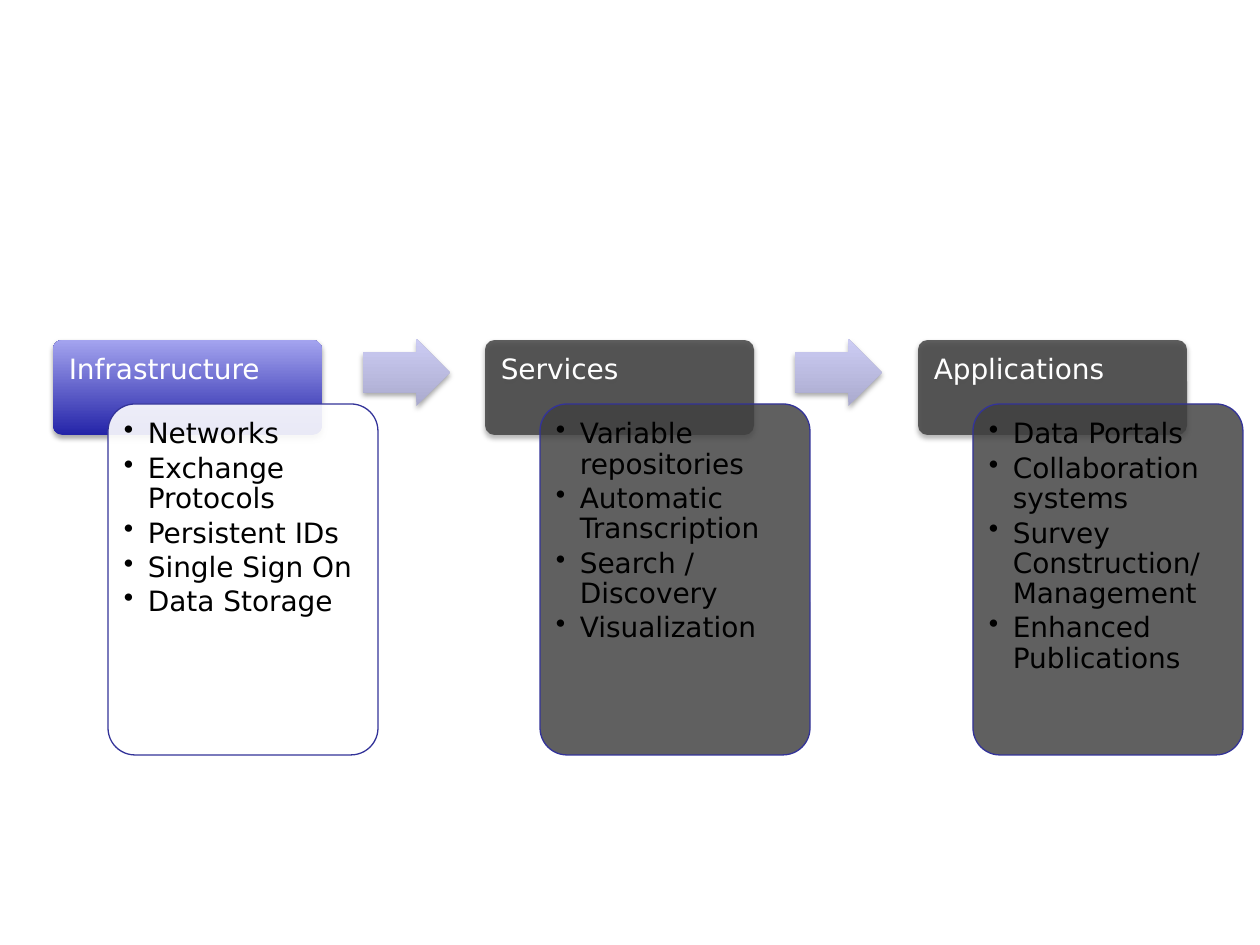
from lxml import etree
from pptx import Presentation
from pptx.dml.color import RGBColor
from pptx.enum.shapes import MSO_SHAPE
from pptx.enum.text import MSO_ANCHOR, PP_ALIGN
from pptx.oxml.ns import qn
from pptx.util import Pt

ROUND = MSO_SHAPE.ROUNDED_RECTANGLE
ARROW = MSO_SHAPE.RIGHT_ARROW
TOP = MSO_ANCHOR.TOP
LEFT = PP_ALIGN.LEFT
PX = 914400 / 126
FONT = "DejaVu Sans"
INK = {
    "head": ("2424A8", "A4A4EF"),
    "arrow": ("AAAACE", "CDCDF4"),
    "white": "FFFFFF",
    "black": "000000",
    "gray": "404040",
    "edge": "333399",
}
STAGES = [
    ("Infrastructure",
     ["Networks", "Exchange Protocols", "Persistent IDs", "Single Sign On",
      "Data Storage"]),
    ("Services",
     ["Variable repositories", "Automatic Transcription",
      "Search / Discovery", "Visualization"]),
    ("Applications",
     ["Data Portals", "Collaboration systems",
      "Survey Construction/ Management", "Enhanced Publications"]),
]


def add_box(kind, box, adjust, color, alpha=100, shadow=False):
    """Add a shape; a pair of colours makes a gradient from bottom to top."""
    shape = slide.shapes.add_shape(kind, *[round(n * PX) for n in box])
    for i, value in enumerate(adjust):
        shape.adjustments[i] = value
    shape.line.fill.background()
    shape.shadow.inherit = False
    if isinstance(color, tuple):
        shape.fill.gradient()
        shape.fill.gradient_angle = 90
        for stop, tone in zip(shape.fill.gradient_stops, color):
            stop.color.rgb = RGBColor.from_string(tone)
    else:
        shape.fill.solid()
        shape.fill.fore_color.rgb = RGBColor.from_string(color)
        tone = shape._element.spPr.find(qn("a:solidFill"))[0]
        etree.SubElement(tone, qn("a:alpha"), val=str(alpha * 1000))
    if shadow:
        effects = shape._element.spPr.find(qn("a:effectLst"))
        outer = etree.SubElement(
            effects, qn("a:outerShdw"), blurRad=str(Pt(3.1)),
            dist=str(Pt(1.8)), dir="5400000", rotWithShape="0")
        tone = etree.SubElement(outer, qn("a:srgbClr"), val=INK["black"])
        etree.SubElement(tone, qn("a:alpha"), val="35000")
    return shape


def write(shape, lines, color, side, top, bullet=False):
    frame = shape.text_frame
    frame.word_wrap = True
    frame.vertical_anchor = TOP
    frame.margin_left = frame.margin_right = round(side * PX)
    frame.margin_top = frame.margin_bottom = round(top * PX)
    frame.text = "\n".join(lines)
    for para in frame.paragraphs:
        para.alignment = LEFT
        para.line_spacing = 0.9
        if bullet:
            para.space_after = Pt(2.4)
            props = para._p.get_or_add_pPr()
            props.set("marL", str(round(24 * PX)))
            props.set("indent", str(round(-24 * PX)))
            etree.SubElement(props, qn("a:buChar"), char="•")
        for run in para.runs:
            run.font.name = FONT
            run.font.size = Pt(16)
            run.font.color.rgb = RGBColor.from_string(color)


deck = Presentation()
deck.slide_width = round(1260 * PX)
deck.slide_height = round(945 * PX)
slide = deck.slides.add_slide(deck.slide_layouts[6])

for i, (name, items) in enumerate(STAGES):
    x = 53 + 865 * i // 2
    first = i == 0

    head = add_box(ROUND, (x, 340, 269, 95), [0.1],
                   INK["head"] if first else INK["gray"], 83, shadow=True)
    write(head, [name], INK["white"], 13, 13)

    panel = add_box(ROUND, (x + 55, 404, 270, 351), [0.1],
                    INK["white"] if first else INK["gray"],
                    90 if first else 83)
    panel.line.color.rgb = RGBColor.from_string(INK["edge"])
    panel.line.width = Pt(0.75)
    write(panel, items, INK["black"], 8, 8, bullet=True)

    if i < len(STAGES) - 1:
        add_box(ARROW, (x + 310, 339, 87, 67), [0.6, 0.5], INK["arrow"],
                shadow=True)

deck.save("out.pptx")
